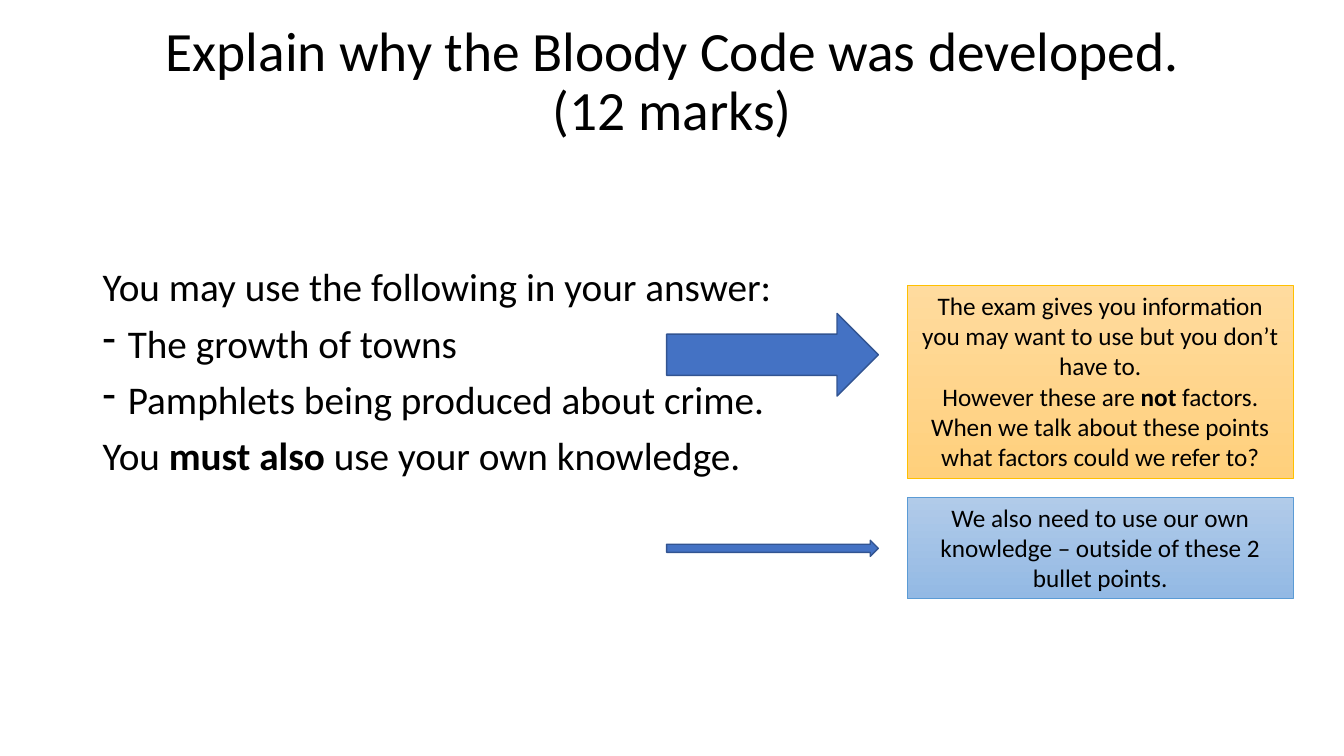
from lxml.etree import SubElement
from pptx import Presentation
from pptx.dml.color import RGBColor as Rgb
from pptx.enum.shapes import MSO_SHAPE as Preset
from pptx.enum.text import MSO_ANCHOR as Anchor, PP_ALIGN as Align
from pptx.oxml.ns import qn
from pptx.util import Inches, Pt

COLORS = {
    "text": "000000",
    "arrow": "4472C4",
    "arrow_edge": "325491",
    "gold_top": "FFDB9E",
    "gold_bottom": "FFD07C",
    "gold_edge": "FFC000",
    "blue_top": "B1CBE9",
    "blue_bottom": "93B9E4",
    "blue_edge": "5B9BD5",
}
FORMATS = {
    "title": {"alignment": Align.CENTER, "line_spacing": 0.9},
    "body": {"line_spacing": 0.9},
    "note": {"alignment": Align.CENTER},
}
SIZES = {"title": 39.6, "body": 28, "note": 18}
ARROW_LEFT, ARROW_WIDTH = 49.6, 15.75
NOTE_LEFT, NOTE_WIDTH = 67.5, 28.73
TEXT_LEFT, TEXT_WIDTH = 6.9, 86.25


def color(name):
    return Rgb.from_string(COLORS[name])


class SlideBuilder:
    """Draw styled elements on one page, with lengths in percent of its size."""

    def __init__(self, deck):
        self.deck = deck
        self.page = deck.slides.add_slide(deck.slide_layouts[6])

    def area(self, left, top, width, height):
        across, down = self.deck.slide_width / 100, self.deck.slide_height / 100
        return [int(value) for value in
                (left * across, top * down, width * across, height * down)]

    def bullet(self, para, mark):
        props = para._p.get_or_add_pPr()
        props.set("marL", str(Inches(0.25)))
        props.set("indent", str(-Inches(0.25)))
        SubElement(props, qn("a:buChar")).set("char", mark)

    def fill_frame(self, frame, kind, lines, anchor, gap=0):
        frame.word_wrap = True
        frame.vertical_anchor = anchor
        for index, (mark, spans) in enumerate(lines):
            para = frame.paragraphs[0] if index == 0 else frame.add_paragraph()
            if mark:
                self.bullet(para, mark)
            for name, value in FORMATS[kind].items():
                setattr(para, name, value)
            para.space_before = Pt(gap if index else 0)
            for position, words in enumerate(spans):
                if words == "\n":
                    para.add_line_break()
                    continue
                span = para.add_run()
                span.text = words
                style = {"name": "Calibri", "size": Pt(SIZES[kind]),
                         "bold": kind != "title" and position == 1}
                for name, value in style.items():
                    setattr(span.font, name, value)
                span.font.color.rgb = color("text")

    def text(self, place, kind, lines, anchor=Anchor.TOP, gap=0):
        box = self.page.shapes.add_textbox(*self.area(*place))
        self.fill_frame(box.text_frame, kind, lines, anchor, gap)

    def shape(self, preset, place, edge, weight):
        shape = self.page.shapes.add_shape(preset, *self.area(*place))
        shape.shadow.inherit = False
        shape.line.color.rgb = color(edge)
        shape.line.width = Pt(weight)
        return shape

    def arrow(self, top, height):
        place = ARROW_LEFT, top, ARROW_WIDTH, height
        arrow = self.shape(Preset.RIGHT_ARROW, place, "arrow_edge", 1)
        arrow.fill.solid()
        arrow.fill.fore_color.rgb = color("arrow")

    def note(self, top, height, tint, lines):
        place = NOTE_LEFT, top, NOTE_WIDTH, height
        box = self.shape(Preset.RECTANGLE, place, f"{tint}_edge", 0.5)
        box.fill.gradient()
        box.fill.gradient_angle = 270
        for stop, end, position in zip(box.fill.gradient_stops, ("top", "bottom"), (0, 1)):
            stop.color.rgb = color(f"{tint}_{end}")
            stop.position = position
        self.fill_frame(box.text_frame, "note", lines, Anchor.TOP)


def main():
    deck = Presentation()
    deck.slide_width, deck.slide_height = Inches(13.33), Inches(7.5)
    page = SlideBuilder(deck)
    page.text((TEXT_LEFT, 1.33, TEXT_WIDTH, 19.33), "title", [
        ("", ["Explain why the Bloody Code was developed.", "\n", "(12 marks)"]),
    ], Anchor.MIDDLE)
    page.text((TEXT_LEFT, 34.8, TEXT_WIDTH, 55.33), "body", [
        ("", ["You may use the following in your answer:"]),
        ("-", ["The growth of towns"]),
        ("-", ["Pamphlets being produced about crime."]),
        ("", ["You ", "must also", " use your own knowledge."]),
    ], gap=10)
    page.arrow(41.47, 10.93)
    page.arrow(71.47, 2.13)
    page.note(37.73, 25.6, "gold", [
        ("", ["The exam gives you information you may want to use but you don’t have to."]),
        ("", ["However these are ", "not",
              " factors. When we talk about these points what factors could we refer to?"]),
    ])
    page.note(65.73, 13.47, "blue", [
        ("", ["We also need to use our own knowledge – outside of these 2 bullet points."]),
    ])
    deck.save("out.pptx")


if __name__ == "__main__":
    main()
